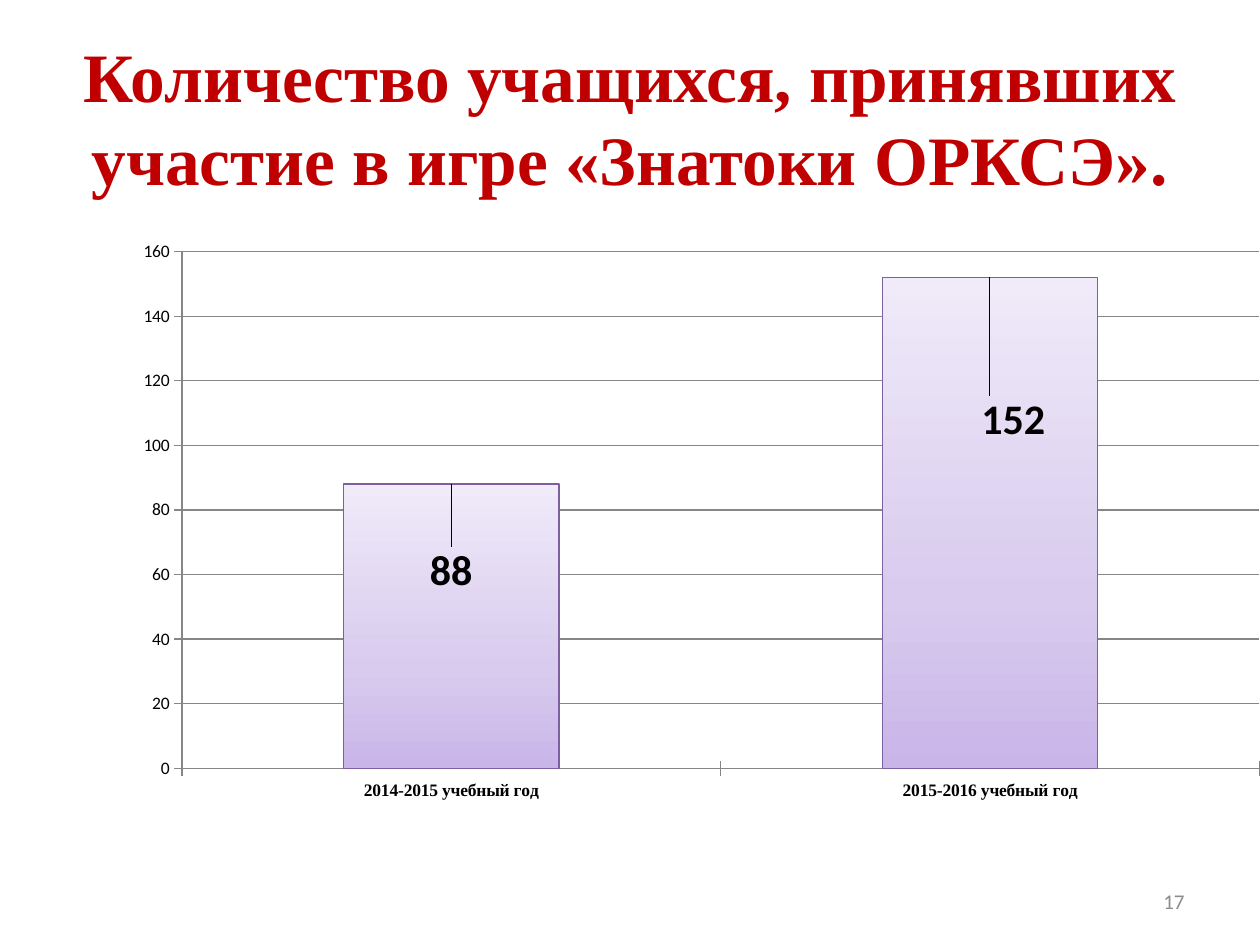
from lxml import etree
from pptx import Presentation
from pptx.chart.data import CategoryChartData
from pptx.dml.color import RGBColor
from pptx.enum.chart import XL_CHART_TYPE, XL_LABEL_POSITION, XL_TICK_MARK
from pptx.enum.text import MSO_ANCHOR, PP_ALIGN
from pptx.oxml import parse_xml
from pptx.oxml.ns import nsdecls, qn
from pptx.util import Pt

COLUMNS = XL_CHART_TYPE.COLUMN_CLUSTERED
OUTSIDE_END = XL_LABEL_POSITION.OUTSIDE_END
CROSS = XL_TICK_MARK.CROSS
MIDDLE = MSO_ANCHOR.MIDDLE
CENTER, RIGHT = PP_ALIGN.CENTER, PP_ALIGN.RIGHT

# Content
COLORS = {"title": "C00000", "number": "8C8C8C", "text": "000000",
          "axis": "868686", "outline": "7D60A0"}
BAR_GRADIENT = [(0, "C9B5E8"), (35, "D8CBEE"), (100, "F0EAF9")]
TEXTS = [
    ("Количество учащихся, принявших участие в игре «Знатоки ОРКСЭ».",
     (36, 21.6, 648, 90), CENTER,
     {"name": "Times New Roman", "size": Pt(39.6), "bold": True}, "title"),
    ("17", (516.24, 500.4, 167.76, 28.8), RIGHT,
     {"name": "Calibri", "size": Pt(12)}, "number"),
]
PARTICIPANTS = {"2014-2015 учебный год": 88, "2015-2016 учебный год": 152}
CHART_BOX = (50.4, 129.6, 669.6, 355.68)
PLOT_AREA = {"x": 0.08, "y": 0.04, "w": 0.92, "h": 0.83}
LABEL_SHIFTS = [{"x": 0, "y": 0.19}, {"x": 0.02, "y": 0.28}]


def style_font(font, formats, color):
    for name, value in formats.items():
        setattr(font, name, value)
    font.color.rgb = RGBColor.from_string(COLORS[color])


def manual_layout(fractions, inner=False):
    layout = parse_xml(f'<c:layout {nsdecls("c")}><c:manualLayout/></c:layout>')
    settings = dict(fractions)
    if inner:
        settings = {"layoutTarget": "inner", "xMode": "edge", "yMode": "edge", **settings}
    for tag, value in settings.items():
        etree.SubElement(layout[0], qn(f"c:{tag}")).set("val", str(value))
    return layout


def style_line(line, color):
    line.color.rgb = RGBColor.from_string(COLORS[color])
    line.width = Pt(0.75)


presentation = Presentation()
presentation.slide_width, presentation.slide_height = Pt(720), Pt(540)
slide = presentation.slides.add_slide(presentation.slide_layouts[6])

# Title and slide number
for text, box, alignment, formats, color in TEXTS:
    frame = slide.shapes.add_textbox(*map(Pt, box)).text_frame
    frame.word_wrap = True
    frame.vertical_anchor = MIDDLE
    paragraph = frame.paragraphs[0]
    paragraph.alignment = alignment
    run = paragraph.add_run()
    run.text = text
    style_font(run.font, formats, color)

# Chart of participants
participants = CategoryChartData()
participants.categories = list(PARTICIPANTS)
participants.add_series("Series 1", list(PARTICIPANTS.values()))
chart = slide.shapes.add_chart(COLUMNS, *map(Pt, CHART_BOX), participants).chart
chart.has_legend = chart.has_title = False
style_font(chart.font, {"name": "Calibri", "size": Pt(10)}, "text")

plot = chart.plots[0]
plot.gap_width = 150
plot.vary_by_categories = False
plot_area = chart.element.find(".//" + qn("c:plotArea"))
for default_layout in plot_area.findall(qn("c:layout")):
    plot_area.remove(default_layout)
plot_area.insert(0, manual_layout(PLOT_AREA, inner=True))

# Axes
years, counts = chart.category_axis, chart.value_axis
for axis in (years, counts):
    axis.major_tick_mark = CROSS
    style_line(axis.format.line, "axis")
style_font(years.tick_labels.font,
           {"name": "Times New Roman", "size": Pt(10), "bold": True}, "text")
for name, value in {"minimum_scale": 0, "maximum_scale": 160, "major_unit": 20,
                    "has_major_gridlines": True}.items():
    setattr(counts, name, value)
style_line(counts.major_gridlines.format.line, "axis")

# Gradient bars
bars = plot.series[0]
style_line(bars.format.line, "outline")
stops = "".join(f'<a:gs pos="{percent * 1000}"><a:srgbClr val="{color}"/></a:gs>'
                for percent, color in BAR_GRADIENT)
bars.format.line._ln.addprevious(parse_xml(
    f'<a:gradFill {nsdecls("a")} rotWithShape="1"><a:gsLst>{stops}</a:gsLst>'
    '<a:lin ang="16200000" scaled="0"/></a:gradFill>'))

# Value labels, moved down into the bars
for index in range(len(PARTICIPANTS)):
    label = bars.points[index].data_label
    style_font(label.font, {"name": "Calibri", "size": Pt(24), "bold": True}, "text")
    label.position = OUTSIDE_END
label_elements = bars._element.findall(".//" + qn("c:dLbl"))
for element, shift in zip(label_elements, LABEL_SHIFTS):
    element.find(qn("c:idx")).addnext(manual_layout(shift))

presentation.save("out.pptx")
